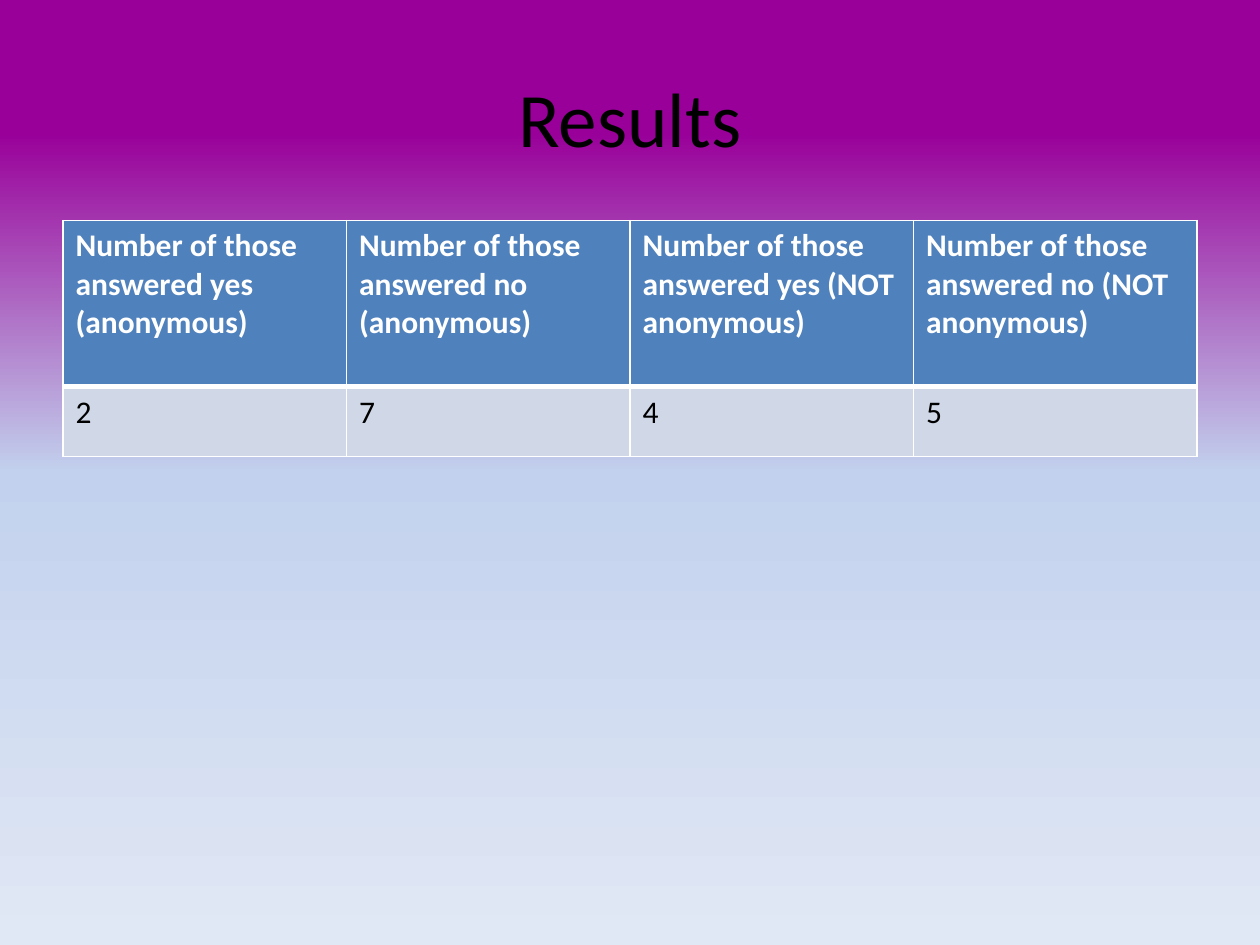
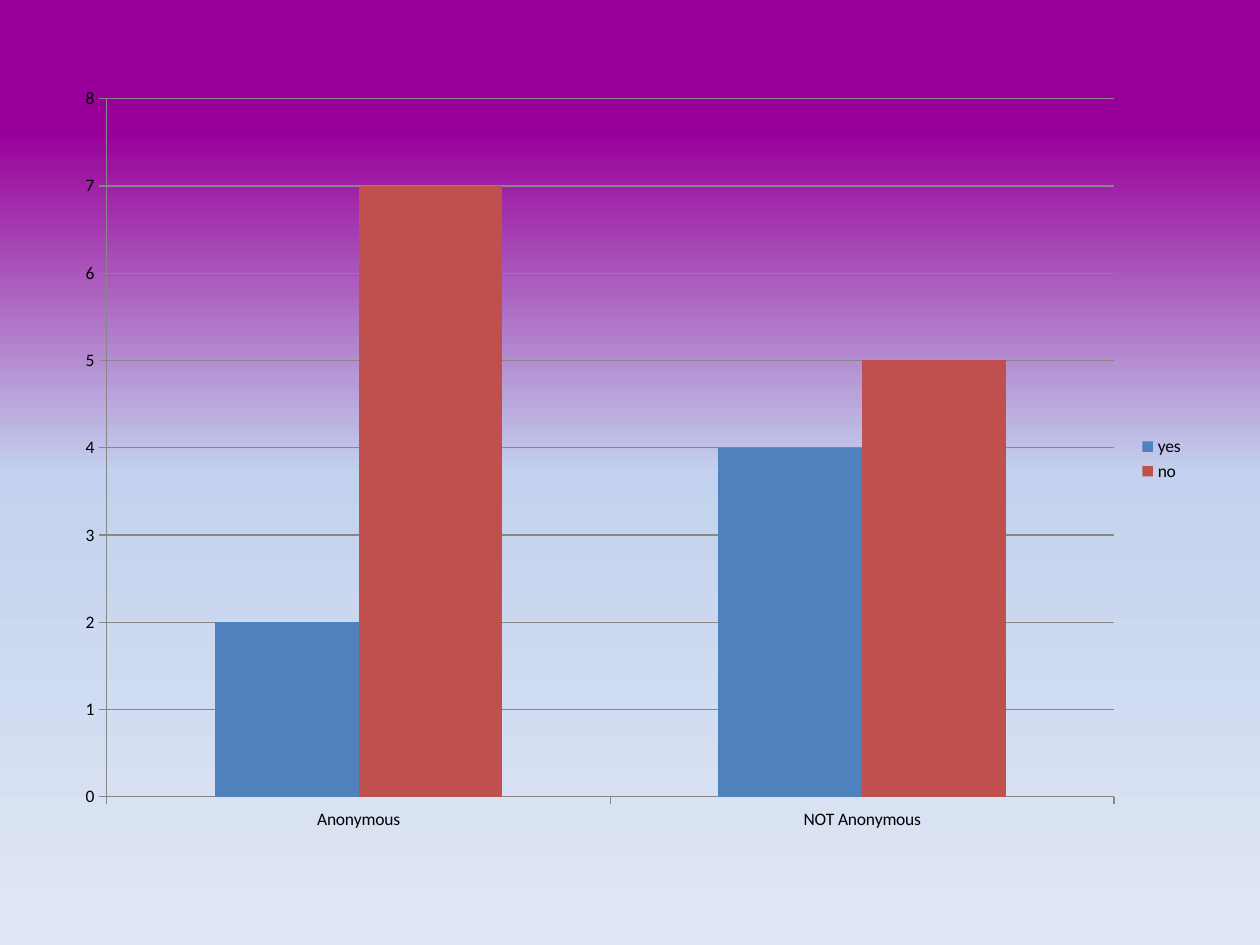
from copy import deepcopy

from lxml.etree import SubElement
from pptx import Presentation
from pptx.chart.data import CategoryChartData
from pptx.dml.color import RGBColor
from pptx.enum.chart import XL_CHART_TYPE as ChartType, XL_LEGEND_POSITION as LegendPosition
from pptx.enum.text import MSO_ANCHOR as Anchor, PP_ALIGN as Align
from pptx.oxml.ns import qn
from pptx.util import Pt

PURPLE = RGBColor(0x99, 0x00, 0x99)
SKY = RGBColor(0xC2, 0xD1, 0xED)
PALE = RGBColor(0xE1, 0xE8, 0xF5)
BLUE = RGBColor(0x4F, 0x81, 0xBD)
RED = RGBColor(0xC0, 0x50, 0x4D)
ROW_BLUE = RGBColor(0xD0, 0xD8, 0xE8)
GREY = RGBColor(0x87, 0x87, 0x87)
WHITE = RGBColor(0xFF, 0xFF, 0xFF)
BLACK = RGBColor(0x00, 0x00, 0x00)
FONT = "Calibri"
LEFT, WIDTH = Pt(36), Pt(648)


def style_font(font, size, color, bold=False):
    font.name = FONT
    font.size = Pt(size)
    font.bold = bold
    font.color.rgb = color


def add_border(cell, side, width):
    """Draw a white line on one side (L, R, T or B); call before filling the cell."""
    line = SubElement(cell._tc.get_or_add_tcPr(), qn(f"a:ln{side}"), w=str(Pt(width)))
    SubElement(SubElement(line, qn("a:solidFill")), qn("a:srgbClr"), val=str(WHITE))


deck = Presentation()
deck.slide_width, deck.slide_height = Pt(720), Pt(540)

# Shared background, set on the master
master = deck.slide_master
background = master.background.fill
background.gradient()
background.gradient_angle = 270
stop_list = next(master.element.iter(qn("a:gsLst")))
stop_list.append(deepcopy(stop_list[-1]))
stops = [(0.14, PURPLE), (0.5, SKY), (1, PALE)]
for stop, (position, color) in zip(background.gradient_stops, stops):
    stop.position = position
    stop.color.rgb = color

# Slide 1: results table
page = deck.slides.add_slide(deck.slide_layouts.get_by_name("Title Only"))
title = page.shapes.title
title.left, title.top, title.width, title.height = LEFT, Pt(21.6), WIDTH, Pt(90)
title.text_frame.vertical_anchor = Anchor.MIDDLE
para = title.text_frame.paragraphs[0]
para.alignment = Align.CENTER
span = para.add_run()
span.text = "Results"
style_font(span.font, 44, BLACK)

results = [
    ["Number of those answered yes (anonymous)",
     "Number of those answered no (anonymous)",
     "Number of those answered yes (NOT anonymous)",
     "Number of those answered no (NOT anonymous)"],
    ["2", "7", "4", "5"],
]
row_heights = [95, 40]
table = page.shapes.add_table(2, 4, LEFT, Pt(126), WIDTH, Pt(sum(row_heights))).table
for row_index, (texts, height) in enumerate(zip(results, row_heights)):
    table.rows[row_index].height = Pt(height)
    header = row_index == 0
    for column_index, text in enumerate(texts):
        cell = table.cell(row_index, column_index)
        for side, width in [("L", 1), ("R", 1), ("T", 1 if header else 3), ("B", 3 if header else 1)]:
            add_border(cell, side, width)
        cell.fill.solid()
        cell.fill.fore_color.rgb = BLUE if header else ROW_BLUE
        span = cell.text_frame.paragraphs[0].add_run()
        span.text = text
        style_font(span.font, 18, WHITE if header else BLACK, header)

# Slide 2: results chart
page = deck.slides.add_slide(deck.slide_layouts.get_by_name("Blank"))
answers = CategoryChartData()
answers.categories = ["Anonymous", "NOT Anonymous"]
answers.add_series("yes", [2, 4])
answers.add_series("no", [7, 5])
chart = page.shapes.add_chart(
    ChartType.COLUMN_CLUSTERED, LEFT, Pt(42), WIDTH, Pt(440.5), answers).chart
style_font(chart.font, 10, BLACK)
chart.has_title = False
chart.has_legend = True
chart.legend.position = LegendPosition.RIGHT
chart.legend.include_in_layout = False

plot = chart.plots[0]
plot.gap_width = 150
plot.overlap = 0
plot.vary_by_categories = False
for series, color in zip(plot.series, [BLUE, RED]):
    series.format.fill.solid()
    series.format.fill.fore_color.rgb = color

value_axis = chart.value_axis
value_axis.minimum_scale, value_axis.maximum_scale, value_axis.major_unit = 0, 8, 1
value_axis.has_major_gridlines = True
for part in [value_axis, chart.category_axis, value_axis.major_gridlines]:
    part.format.line.color.rgb = GREY
    part.format.line.width = Pt(0.75)

deck.save("out.pptx")
